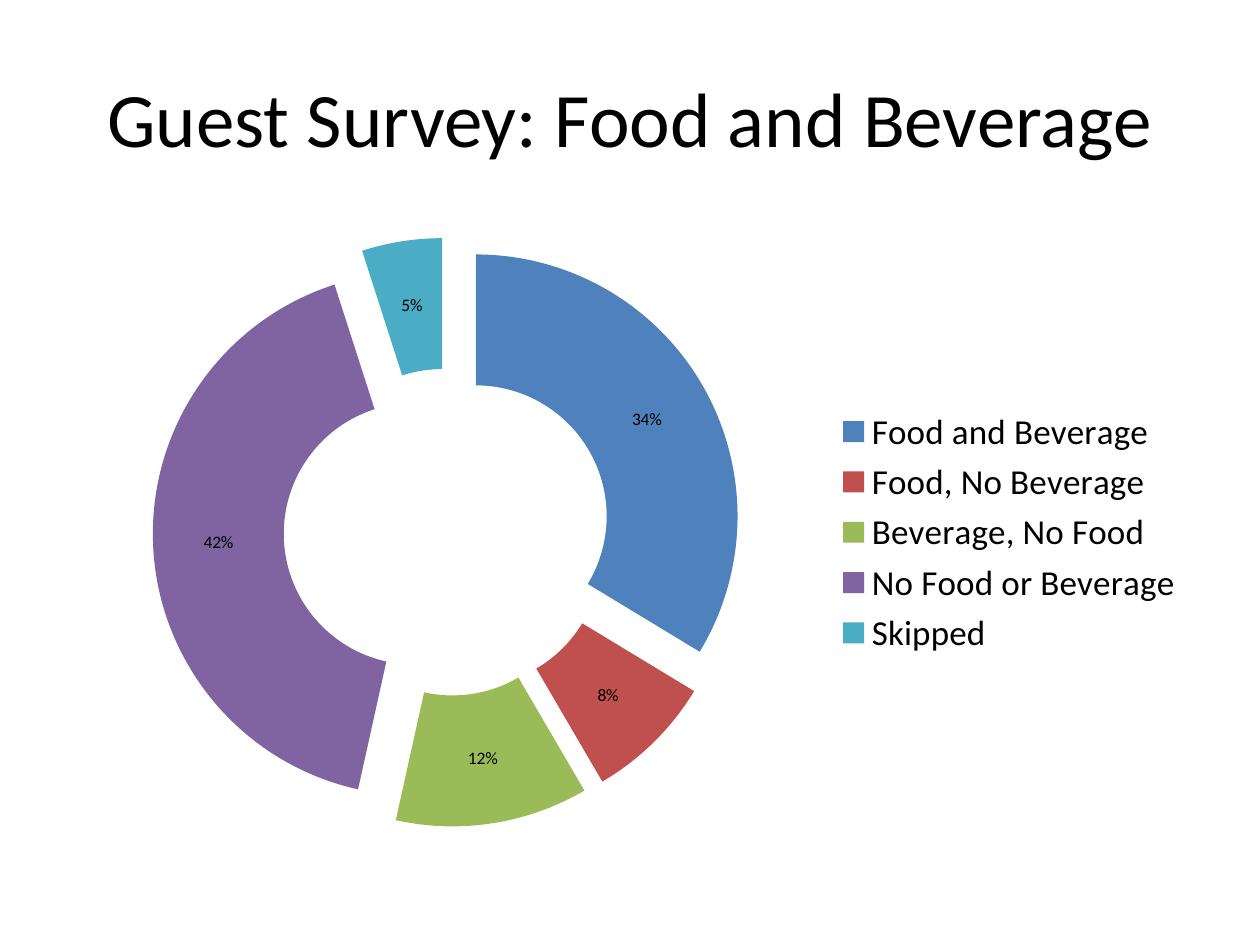
from dataclasses import dataclass

from pptx import Presentation
from pptx import util as u
from pptx.chart.data import CategoryChartData
from pptx.dml.color import RGBColor
from pptx.enum import chart as charts, text

PX = u.Inches(1) // 100


@dataclass(frozen=True)
class Theme:
    font: str = "Calibri"
    ink: RGBColor = RGBColor.from_string("000000")
    slices: tuple = ("4F81BD", "C0504D", "9BBB59", "8064A2", "4BACC6")
    title_size: int = 44
    legend_size: int = 20
    label_size: int = 10


def style(font, size):
    font.name = theme.font
    font.size = u.Pt(size)
    font.color.rgb = theme.ink


theme = Theme()
answers = {
    "Food and Beverage": 34,
    "Food, No Beverage": 8,
    "Beverage, No Food": 12,
    "No Food or Beverage": 42,
    "Skipped": 5,
}

deck = Presentation()
deck.slide_width = 1000 * PX
deck.slide_height = 750 * PX
page = deck.slides.add_slide(deck.slide_layouts[5])

title = page.shapes.title
title.left, title.top, title.width, title.height = (n * PX for n in (50, 30, 900, 125))
title.text_frame.text = "Guest Survey: Food and Beverage"
title.text_frame.vertical_anchor = text.MSO_ANCHOR.MIDDLE
heading = title.text_frame.paragraphs[0]
heading.alignment = text.PP_ALIGN.CENTER
style(heading.runs[0].font, theme.title_size)

survey = CategoryChartData()
survey.categories = list(answers)
survey.add_series("Series 1", list(answers.values()))
frame = page.shapes.add_chart(
    charts.XL_CHART_TYPE.DOUGHNUT_EXPLODED,
    50 * PX, 175 * PX, 900 * PX, 495 * PX, survey,
)
doughnut = frame.chart
doughnut.has_title = False
style(doughnut.font, theme.label_size)

doughnut.has_legend = True
doughnut.legend.position = charts.XL_LEGEND_POSITION.RIGHT
doughnut.legend.include_in_layout = False
style(doughnut.legend.font, theme.legend_size)

plot = doughnut.plots[0]
plot.vary_by_categories = True
plot.has_data_labels = True
labels = plot.data_labels
labels.show_percentage = True
labels.show_value = False
style(labels.font, theme.label_size)

for index, color in enumerate(theme.slices):
    fill = plot.series[0].points[index].format.fill
    fill.solid()
    fill.fore_color.rgb = RGBColor.from_string(color)

deck.save("out.pptx")
